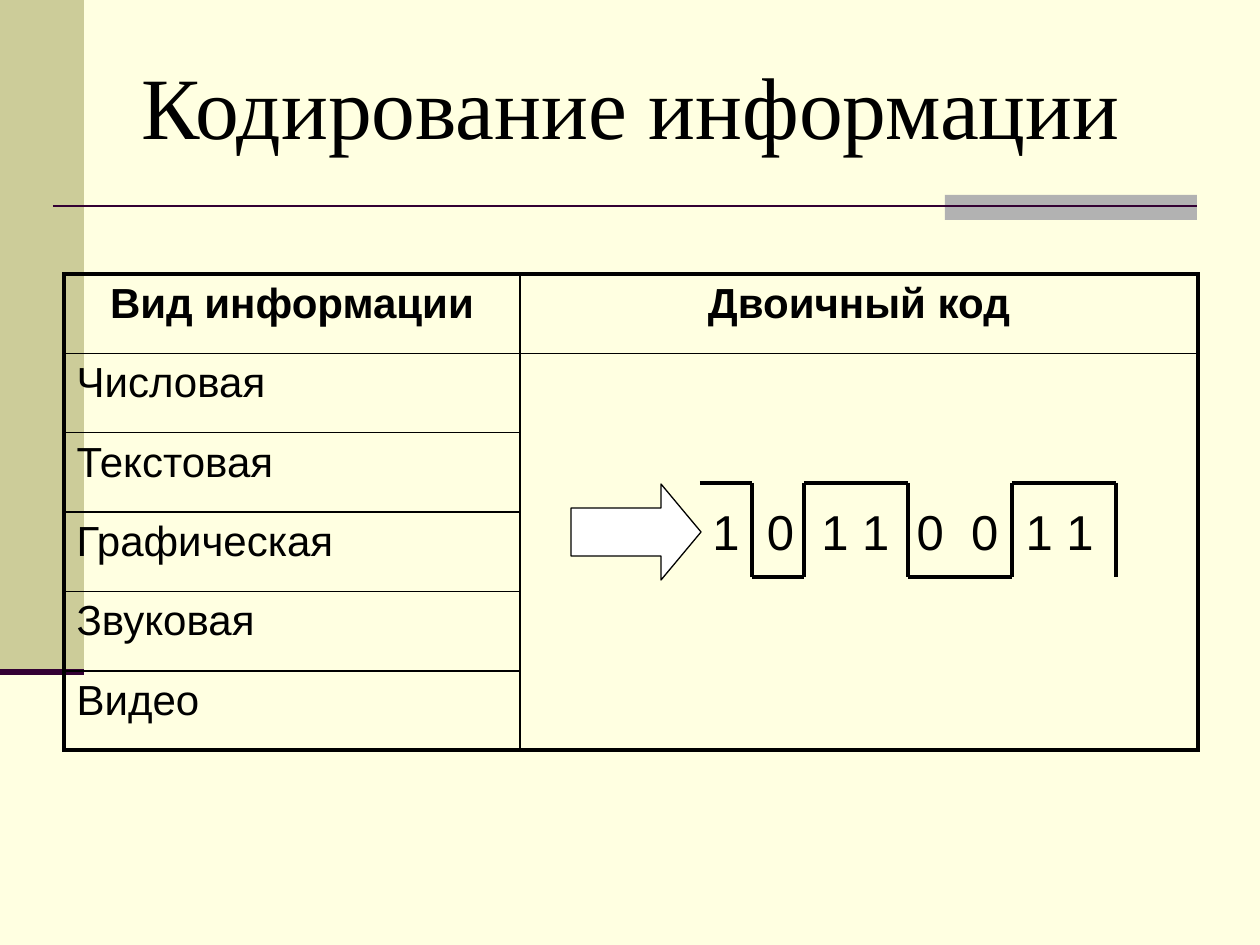
from itertools import pairwise

from lxml import etree
from pptx import Presentation
from pptx import util as u
from pptx.dml.color import RGBColor
from pptx.enum import shapes, text
from pptx.oxml.ns import qn

PX = 914400 / 126
COLORS = {
    "background": "FFFFE1",
    "band": "CCCC99",
    "accent": "B2B2B2",
    "rule": "330033",
    "ink": "000000",
    "arrow": "FFFFFF",
}
KINDS = ["Числовая", "Текстовая", "Графическая", "Звуковая", "Видео"]
BITS = "10110011"
THIN, THICK = 1, 2.25


def px(*lengths):
    return [u.Emu(round(length * PX)) for length in lengths]


def color(name):
    return RGBColor.from_string(COLORS[name])


def add_run(paragraph, words, size, font="Arial", bold=False):
    run = paragraph.add_run()
    run.text = words
    run.font.size = u.Pt(size)
    run.font.name = font
    run.font.bold = bold
    run.font.color.rgb = color("ink")
    return run


def add_block(slide, preset, box, fill, outline=None):
    block = slide.shapes.add_shape(preset, *px(*box))
    block.shadow.inherit = False
    block.fill.solid()
    block.fill.fore_color.rgb = color(fill)
    if outline:
        block.line.color.rgb = color(outline)
        block.line.width = u.Pt(0.75)
    else:
        block.line.fill.background()
    return block


def add_line(slide, start, end, stroke, width):
    line = slide.shapes.add_connector(
        shapes.MSO_CONNECTOR.STRAIGHT, *px(*start, *end))
    line.line.color.rgb = color(stroke)
    line.line.width = u.Pt(width)
    etree.SubElement(line._element.spPr, qn("a:effectLst"))


def add_title(slide):
    title = slide.shapes.add_textbox(*px(64, 26, 1134, 158)).text_frame
    title.word_wrap = True
    title.vertical_anchor = text.MSO_ANCHOR.MIDDLE
    title.paragraphs[0].alignment = text.PP_ALIGN.CENTER
    add_run(title.paragraphs[0], "Кодирование информации", 50, "Times New Roman")


def set_borders(cell, widths):
    """Draw the left, right, top and bottom borders, widths in points."""
    properties = cell._tc.get_or_add_tcPr()
    for side, width in zip("LRTB", widths):
        border = etree.SubElement(
            properties, qn(f"a:ln{side}"), w=str(u.Pt(width)))
        fill = etree.SubElement(border, qn("a:solidFill"))
        etree.SubElement(fill, qn("a:srgbClr"), val=COLORS["ink"])


def add_kinds_table(slide):
    rows = len(KINDS) + 1
    frame = slide.shapes.add_table(rows, 2, *px(64, 274, 1134, 476))
    table = frame.table
    table.first_row = table.horz_banding = False
    table.columns[0].width, table.columns[1].width = px(456, 678)
    for row in table.rows:
        row.height, = px(79.4)
    table.cell(1, 1).merge(table.cell(rows - 1, 1))

    for r in range(rows):
        for c in range(2):
            cell = table.cell(r, c)
            last_row = r + cell.span_height if cell.is_merge_origin else r + 1
            outer = (c == 0, c == 1, r == 0, last_row == rows)
            set_borders(cell, [THICK if edge else THIN for edge in outer])
            cell.fill.background()

    for c, heading in enumerate(["Вид информации", "Двоичный код"]):
        paragraph = table.cell(0, c).text_frame.paragraphs[0]
        paragraph.alignment = text.PP_ALIGN.CENTER
        add_run(paragraph, heading, 24, bold=True)
    for r, kind in enumerate(KINDS, 1):
        add_run(table.cell(r, 0).text_frame.paragraphs[0], kind, 24)


def add_signal(slide):
    """Trace the bits as a square wave, high for 1 and low for 0."""
    left, step = 700, 52
    level = {"1": 483, "0": 577}
    points = [(left, level[BITS[0]])]
    for i, (bit, following) in enumerate(pairwise(BITS + "0"), 1):
        if bit != following:
            x = left + i * step
            points += [(x, level[bit]), (x, level[following])]
    for start, end in pairwise(points):
        add_line(slide, start, end, "ink", THICK)


def add_bits(slide):
    """Write the bits, with a wider space wherever a 0 is involved."""
    frame = slide.shapes.add_textbox(*px(700, 495, 407, 72)).text_frame
    frame.word_wrap = False
    paragraph = frame.paragraphs[0]
    add_run(paragraph, BITS[0], 28)
    for bit, following in pairwise(BITS):
        gap = add_run(paragraph, " ", 28)
        if "0" in (bit, following):
            gap.font._element.set("spc", "780")
        add_run(paragraph, following, 28)


def main():
    deck = Presentation()
    deck.slide_width, deck.slide_height = px(1260, 945)
    slide = deck.slides.add_slide(deck.slide_layouts[6])
    slide.background.fill.solid()
    slide.background.fill.fore_color.rgb = color("background")

    preset = shapes.MSO_SHAPE
    add_block(slide, preset.RECTANGLE, (0, 0, 84, 672), "band")
    add_block(slide, preset.RECTANGLE, (945, 195, 252, 25), "accent")
    add_line(slide, (53, 206), (1197, 206), "rule", 1.5)
    add_line(slide, (0, 672), (84, 672), "rule", 3.5)
    add_title(slide)
    add_kinds_table(slide)
    arrow = add_block(
        slide, preset.RIGHT_ARROW, (571, 484, 130, 96), "arrow", "ink")
    arrow.adjustments[1] = 0.417
    add_signal(slide)
    add_bits(slide)
    deck.save("out.pptx")


if __name__ == "__main__":
    main()
